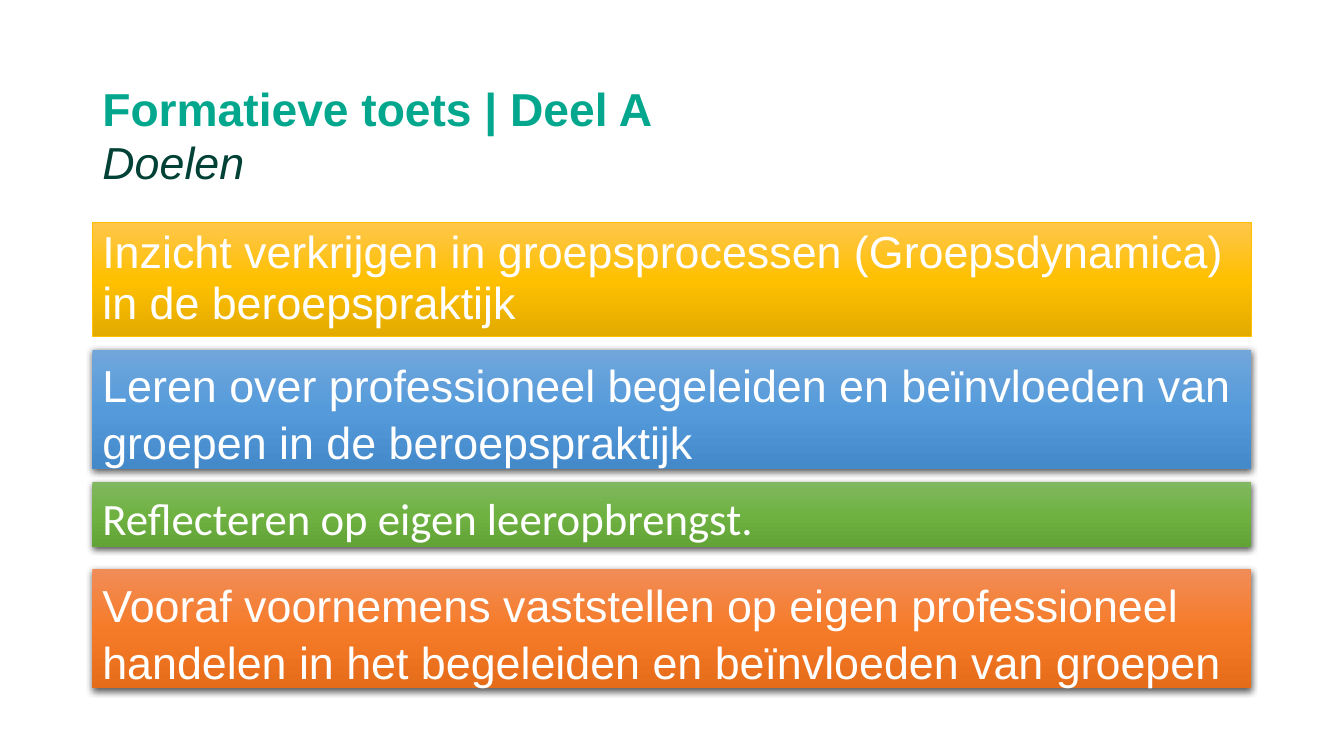
from dataclasses import dataclass

from lxml import etree
from pptx import Presentation
from pptx.dml.color import RGBColor
from pptx.enum.shapes import MSO_SHAPE
from pptx.enum.text import MSO_ANCHOR, PP_ALIGN
from pptx.oxml import parse_xml
from pptx.oxml.ns import nsdecls, qn
from pptx.util import Cm, Pt

RECT = MSO_SHAPE.RECTANGLE
TOP = MSO_ANCHOR.TOP
LEFT = PP_ALIGN.LEFT


@dataclass(frozen=True)
class Theme:
    title: str = "03A78D"
    subtitle: str = "014136"
    text: str = "FFFFFF"
    border: str = "FFC000"
    shadow: str = "000000"
    yellow: tuple[str, ...] = ("FFC64B", "FFC000", "E3AB00")
    blue: tuple[str, ...] = ("71A6DB", "559BDB", "448ACA")
    green: tuple[str, ...] = ("81B861", "6FB242", "62A336")
    orange: tuple[str, ...] = ("F18C57", "F67B28", "E56C19")
    font: str = "Arial"
    alt_font: str = "Calibri"
    title_size: int = 33
    body_size: int = 32


THEME = Theme()
MARGIN = 2.33
WIDTH = 29.21


@dataclass(frozen=True)
class Goal:
    text: str
    top: float
    height: float
    stops: tuple[str, ...]
    font: str = THEME.font
    spacing: float = 1.06
    raised: bool = True


GOALS = (
    Goal("Inzicht verkrijgen in groepsprocessen (Groepsdynamica) in de beroepspraktijk",
         5.61, 2.87, THEME.yellow, spacing=0.95, raised=False),
    Goal("Leren over professioneel begeleiden en beïnvloeden van groepen in de beroepspraktijk",
         8.81, 3.0, THEME.blue),
    Goal("Reflecteren op eigen leeropbrengst.",
         12.14, 1.65, THEME.green, font=THEME.alt_font, spacing=1.07),
    Goal("Vooraf voornemens vaststellen op eigen professioneel handelen in het "
         "begeleiden en beïnvloeden van groepen",
         14.35, 3.0, THEME.orange),
)


def write_text(s, text: str, *, color: str, size: int = THEME.body_size,
               font: str = THEME.font, spacing: float = 1.06,
               bold: bool = False, italic: bool = False) -> None:
    tf = s.text_frame
    tf.word_wrap = True
    tf.vertical_anchor = TOP
    p = tf.paragraphs[0]
    p.alignment = LEFT
    p.line_spacing = spacing
    r = p.add_run()
    r.text = text
    r.font.name = font
    r.font.size = Pt(size)
    r.font.bold = bold
    r.font.italic = italic
    r.font.color.rgb = RGBColor.from_string(color)


def fill_gradient(s, colors: tuple[str, ...]) -> None:
    """Fill a shape from top to bottom with evenly spaced colours."""
    s.fill.gradient()
    grad = s.fill._xPr.find(qn("a:gradFill"))
    step = 100000 // (len(colors) - 1)
    stops = "".join(f'<a:gs pos="{i * step}"><a:srgbClr val="{c}"/></a:gs>'
                    for i, c in enumerate(colors))
    grad.getparent().replace(grad, parse_xml(
        f'<a:gradFill {nsdecls("a")} rotWithShape="1"><a:gsLst>{stops}</a:gsLst>'
        '<a:lin ang="5400000" scaled="0"/></a:gradFill>'))


def add_shadow(s) -> None:
    effects = s._element.spPr.find(qn("a:effectLst"))
    shadow = etree.SubElement(effects, qn("a:outerShdw"), blurRad=str(Pt(4.5)),
                              dist=str(Pt(1.5)), dir="5400000", algn="ctr",
                              rotWithShape="0")
    color = etree.SubElement(shadow, qn("a:srgbClr"), val=THEME.shadow)
    etree.SubElement(color, qn("a:alpha"), val="63000")


def add_goal(slide, goal: Goal) -> None:
    s = slide.shapes.add_shape(RECT, Cm(MARGIN), Cm(goal.top), Cm(WIDTH), Cm(goal.height))
    fill_gradient(s, goal.stops)
    s.shadow.inherit = False
    if goal.raised:
        s.line.fill.background()
        add_shadow(s)
    else:
        s.line.color.rgb = RGBColor.from_string(THEME.border)
        s.line.width = Pt(0.5)
    write_text(s, goal.text, color=THEME.text, font=goal.font, spacing=goal.spacing)


def main() -> None:
    prs = Presentation()
    prs.slide_width, prs.slide_height = Cm(33.87), Cm(19.05)
    slide = prs.slides.add_slide(prs.slide_layouts[6])
    title = slide.shapes.add_textbox(Cm(MARGIN), Cm(2.01), Cm(WIDTH), Cm(2.01))
    write_text(title, "Formatieve toets | Deel A", color=THEME.title,
               size=THEME.title_size, spacing=0.95, bold=True)
    subtitle = slide.shapes.add_textbox(Cm(MARGIN), Cm(3.2), Cm(16.94), Cm(1.63))
    write_text(subtitle, "Doelen", color=THEME.subtitle, italic=True)
    for goal in GOALS:
        add_goal(slide, goal)
    prs.save("out.pptx")


if __name__ == "__main__":
    main()
